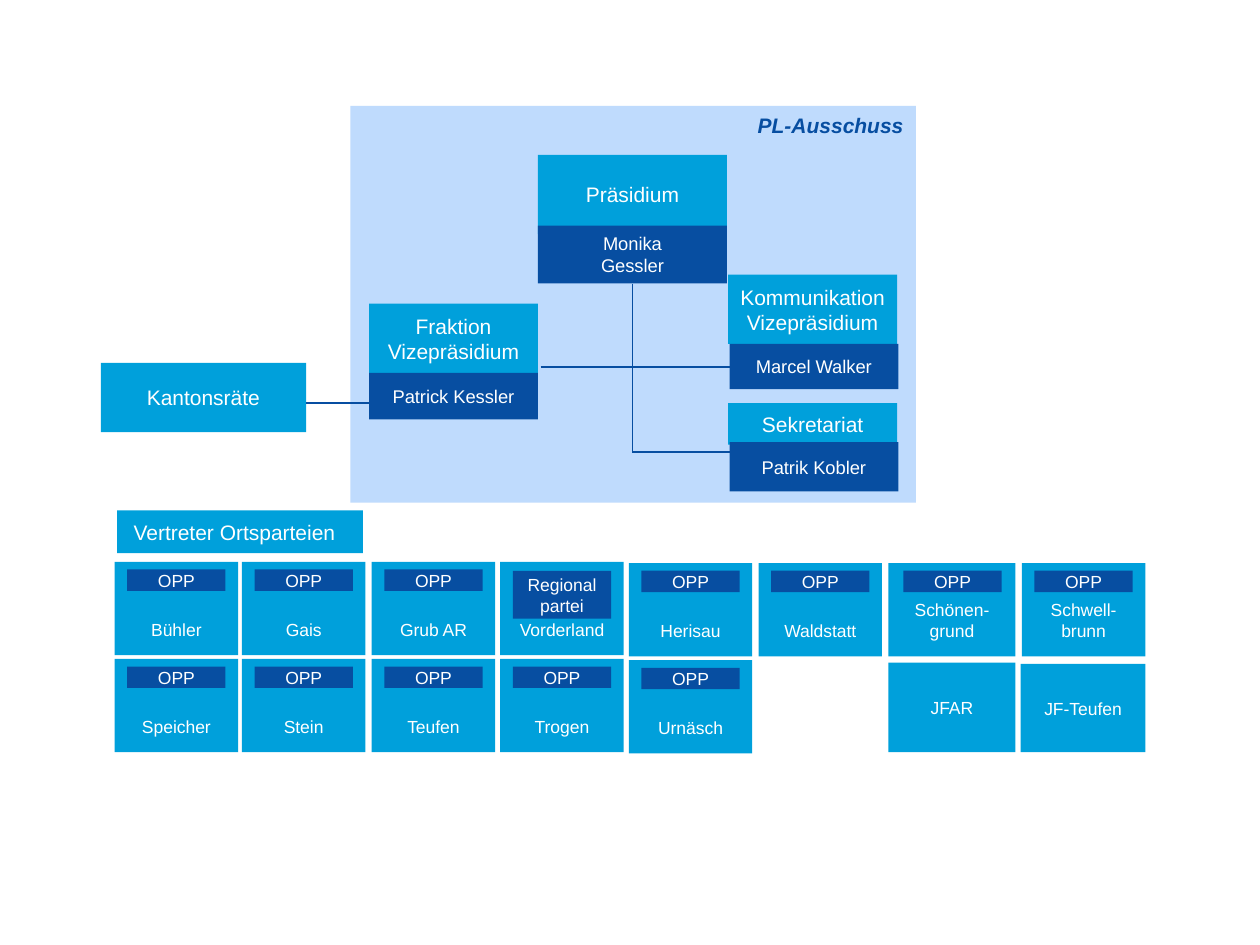
from lxml import etree
from pptx import Presentation
from pptx import util as u
from pptx.dml.color import RGBColor
from pptx.enum import shapes, text
from pptx.oxml import ns

PX = 9144  # EMU per px, 100 px to the inch
CYAN = RGBColor(0x00, 0xA0, 0xDB)
NAVY = RGBColor(0x07, 0x4E, 0xA1)
PALE = RGBColor(0xBF, 0xDB, 0xFD)
WHITE = RGBColor(0xFF, 0xFF, 0xFF)

MIDDLE, BOTTOM, TOP = (text.MSO_ANCHOR.MIDDLE, text.MSO_ANCHOR.BOTTOM,
                       text.MSO_ANCHOR.TOP)
LEFT, CENTER, RIGHT = text.PP_ALIGN.LEFT, text.PP_ALIGN.CENTER, text.PP_ALIGN.RIGHT


def px(value):
    return u.Emu(value * PX)


def add_box(slide, box, fill, label, size, color=WHITE, align=CENTER,
            anchor=MIDDLE, insets=(0, 0, 0, 0), emphasis=False):
    """Filled rectangle with its label; insets are left, top, right, bottom."""
    shape = slide.shapes.add_shape(shapes.MSO_SHAPE.RECTANGLE, *map(px, box))
    shape.shadow.inherit = False
    shape.fill.solid()
    shape.fill.fore_color.rgb = fill
    shape.line.fill.background()
    frame = shape.text_frame
    frame.word_wrap = True
    frame.vertical_anchor = anchor
    (frame.margin_left, frame.margin_top,
     frame.margin_right, frame.margin_bottom) = map(px, insets)
    frame.text = label
    for paragraph in frame.paragraphs:
        paragraph.alignment = align
        for run in paragraph.runs:
            run.font.name = "Arial"
            run.font.size = u.Pt(size)
            run.font.color.rgb = color
            if emphasis:
                run.font.bold = run.font.italic = True
    return shape


def add_line(slide, start, end):
    line = slide.shapes.add_connector(
        shapes.MSO_CONNECTOR.STRAIGHT, *map(px, start + end))
    line.line.color.rgb = NAVY
    line.line.width = u.Pt(1)
    etree.SubElement(line._element.spPr, ns.qn("a:effectLst"))
    return line


def add_office(slide, box, office, person, office_height, person_top, shift=0):
    """Office over the person holding it; returns the person's box."""
    left, top, width, height = box
    add_box(slide, (left, top, width, office_height), CYAN, office, 12)
    return add_box(
        slide, (left + shift, top + person_top, width, height - person_top),
        NAVY, person, 10.5)


def add_committee(slide, box):
    left, top, width, height = box
    add_box(slide, box, PALE, "PL-Ausschuss", 12, NAVY, RIGHT, TOP,
            (10, 5, 10, 5), emphasis=True)

    # Offices
    president = add_office(slide, (left + 149, top + 39, 150, 102),
                           "Präsidium", "Monika\vGessler", 63, 56)
    add_office(slide, (left + 15, top + 157, 134, 92),
               "Fraktion Vizepräsidium", "Patrick Kessler", 56, 55)
    communication = add_office(slide, (left + 300, top + 134, 134, 91),
                               "Kommunikation Vizepräsidium", "Marcel Walker",
                               55, 55, shift=1)
    add_office(slide, (left + 300, top + 236, 134, 70),
               "Sekretariat", "Patrik Kobler", 33, 31, shift=1)

    # Trunk below the president and its branches
    trunk, right = left + 224, left + 301
    arm, branch = top + 207, top + 275
    add_line(slide, (trunk, top + 141), (trunk, branch)).begin_connect(president, 2)
    add_line(slide, (left + 151, arm), (right, arm)).end_connect(communication, 1)
    add_line(slide, (trunk, branch), (right, branch))


def add_council(slide, box, committee_left):
    left, top, width, height = box
    add_box(slide, box, CYAN, "Kantonsräte", 12)
    add_line(slide, (left + width, top + 32), (committee_left + 15, top + 32))


def add_local_party(slide, box, name, badge="OPP"):
    left, top, width, height = box
    add_box(slide, box, CYAN, name, 10, anchor=BOTTOM, insets=(0, 0, 0, 12))
    badge_top, badge_height = (7, 38) if "\v" in badge else (6, 17)
    add_box(slide, (left + (width - 77) // 2, top + badge_top, 78, badge_height),
            NAVY, badge, 10)


def add_local_parties(slide, box):
    left, top, width, height = box
    add_box(slide, (left + 2, top, 195, 34), CYAN, "Vertreter Ortsparteien", 12,
            align=LEFT, insets=(13, 5, 8, 5))

    columns = [0, 101, 204, 306, 408, 511, 614, 720]
    rows = [
        (41, ["Bühler", "Gais", "Grub AR", "Vorderland", "Herisau", "Waldstatt",
              "Schönen-\ngrund", "Schwell-\nbrunn"]),
        (118, ["Speicher", "Stein", "Teufen", "Trogen", "Urnäsch"]),
    ]
    for row_top, names in rows:
        for column, name in zip(columns, names):
            tile_width = 101 if column == columns[6] else 98
            # The right half of the first row sits slightly lower
            drop = 1 if column >= columns[4] else 0
            badge = "Regional\vpartei" if name == "Vorderland" else "OPP"
            add_local_party(slide, (left + column, top + row_top + drop,
                                    tile_width, 74), name, badge)

    # Youth parties
    add_box(slide, (left + 614, top + 121, 101, 71), CYAN, "JFAR", 10)
    add_box(slide, (left + 719, top + 122, 99, 70), CYAN, "JF-Teufen", 10)


def main():
    presentation = Presentation()
    presentation.slide_width, presentation.slide_height = px(1000), px(750)
    slide = presentation.slides.add_slide(presentation.slide_layouts[6])
    add_local_parties(slide, (91, 405, 818, 192))
    add_committee(slide, (278, 84, 449, 315))
    add_council(slide, (80, 288, 163, 55), 278)
    presentation.save("out.pptx")


if __name__ == "__main__":
    main()
